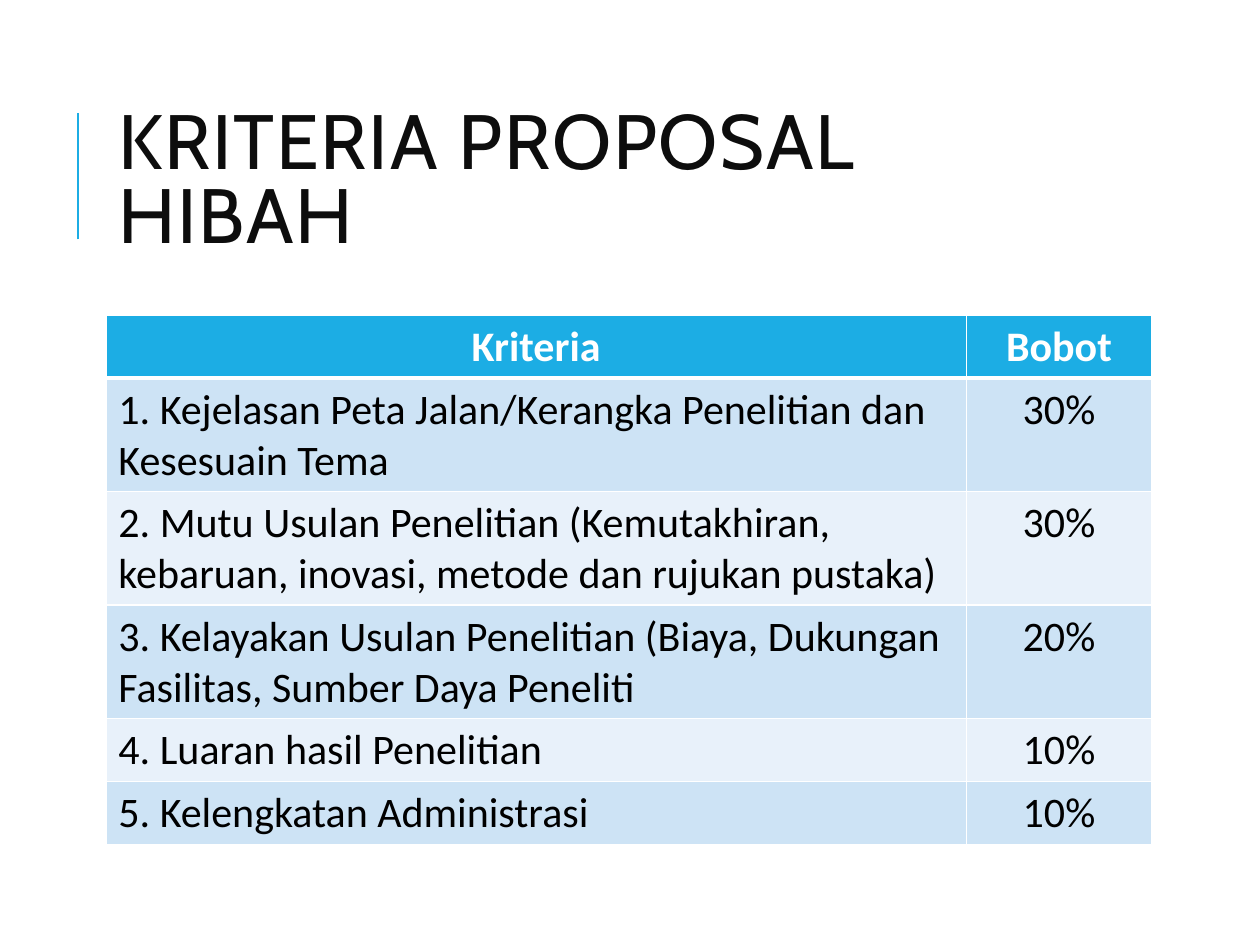
from dataclasses import dataclass

from lxml import etree
from pptx import Presentation
from pptx.dml.color import RGBColor
from pptx.enum import shapes, text
from pptx.oxml import ns
from pptx.util import Inches, Pt


@dataclass(frozen=True)
class Theme:
    accent: str = "1CADE4"
    title_ink: str = "0D0D0D"
    ink: str = "000000"
    white: str = "FFFFFF"
    bands: tuple = ("CDE3F5", "E8F1FA")
    title_font: str = "Cabin"
    body_font: str = "Calibri"
    title_size: int = 44
    body_size: int = 24


CRITERIA = [
    ("1. Kejelasan Peta Jalan/Kerangka Penelitian dan Kesesuain Tema", "30%"),
    ("2. Mutu Usulan Penelitian (Kemutakhiran, kebaruan, inovasi, metode dan rujukan pustaka)", "30%"),
    ("3. Kelayakan Usulan Penelitian (Biaya, Dukungan Fasilitas, Sumber Daya Peneliti", "20%"),
    ("4. Luaran hasil Penelitian", "10%"),
    ("5. Kelengkatan Administrasi", "10%"),
]


def write(frame, words, *, font, size, color, bold=False,
          align=text.PP_ALIGN.LEFT, line_spacing=None, tracking=None):
    paragraph = frame.paragraphs[0]
    paragraph.alignment = align
    if line_spacing:
        paragraph.line_spacing = line_spacing
    run = paragraph.add_run()
    run.text = words
    run.font.name = font
    run.font.size = Pt(size)
    run.font.bold = bold
    run.font.color.rgb = RGBColor.from_string(color)
    if tracking:
        run.font._element.set("spc", str(int(tracking * 100)))


def set_borders(cell, color, **widths):
    """Draw cell edges; widths in points are keyed L, R, T, B in schema order."""
    properties = cell._tc.get_or_add_tcPr()
    for position, (side, width) in enumerate(widths.items()):
        edge = etree.Element(ns.qn(f"a:ln{side}"), w=str(Pt(width)))
        fill = etree.SubElement(edge, ns.qn("a:solidFill"))
        etree.SubElement(fill, ns.qn("a:srgbClr"), val=color)
        properties.insert(position, edge)


class SlideBuilder:
    def __init__(self, slide, theme):
        self.slide = slide
        self.theme = theme

    def rule(self, x, top, bottom):
        line = self.slide.shapes.add_connector(
            shapes.MSO_CONNECTOR.STRAIGHT,
            Inches(x), Inches(bottom), Inches(x), Inches(top))
        line.line.color.rgb = RGBColor.from_string(self.theme.accent)
        line.line.width = Pt(1.5)
        etree.SubElement(line._element.spPr, ns.qn("a:effectLst"))

    def title(self, words, left, top, width, height):
        heading = self.slide.shapes.add_textbox(
            Inches(left), Inches(top), Inches(width), Inches(height))
        frame = heading.text_frame
        frame.word_wrap = True
        frame.vertical_anchor = text.MSO_ANCHOR.MIDDLE
        write(frame, words, font=self.theme.title_font, size=self.theme.title_size,
              color=self.theme.title_ink, line_spacing=0.8, tracking=1)

    def table(self, rows, left, top, height, column_widths, row_height):
        """Place a header row and banded body rows, which grow with their text."""
        theme = self.theme
        holder = self.slide.shapes.add_table(
            len(rows), len(column_widths), Inches(left), Inches(top),
            Inches(sum(column_widths)), Inches(row_height * len(rows)))
        grid = holder.table
        for column, width in zip(grid.columns, column_widths):
            column.width = Inches(width)
        for r, row in enumerate(rows):
            header = r == 0
            fill = theme.accent if header else theme.bands[(r - 1) % 2]
            for c, words in enumerate(row):
                cell = grid.cell(r, c)
                cell.fill.solid()
                cell.fill.fore_color.rgb = RGBColor.from_string(fill)
                centred = header or c > 0
                write(cell.text_frame, words, font=theme.body_font,
                      size=theme.body_size, bold=header,
                      color=theme.white if header else theme.ink,
                      align=text.PP_ALIGN.CENTER if centred else text.PP_ALIGN.LEFT)
                set_borders(cell, theme.white, L=1, R=1,
                            T=3 if r == 1 else 1, B=3 if header else 1)
        holder.height = Inches(height)


def main():
    deck = Presentation()
    deck.slide_width, deck.slide_height = Inches(10), Inches(7.5)
    builder = SlideBuilder(deck.slides.add_slide(deck.slide_layouts[6]), Theme())
    builder.rule(0.62, top=0.9, bottom=1.9)
    builder.title("KRITERIA PROPOSAL HIBAH", 0.84, 0.64, 7.97, 1.64)
    builder.table([("Kriteria", "Bobot"), *CRITERIA], left=0.84, top=2.5,
                  height=4.2, column_widths=(6.83, 1.47), row_height=0.41)
    deck.save("out.pptx")


if __name__ == "__main__":
    main()
